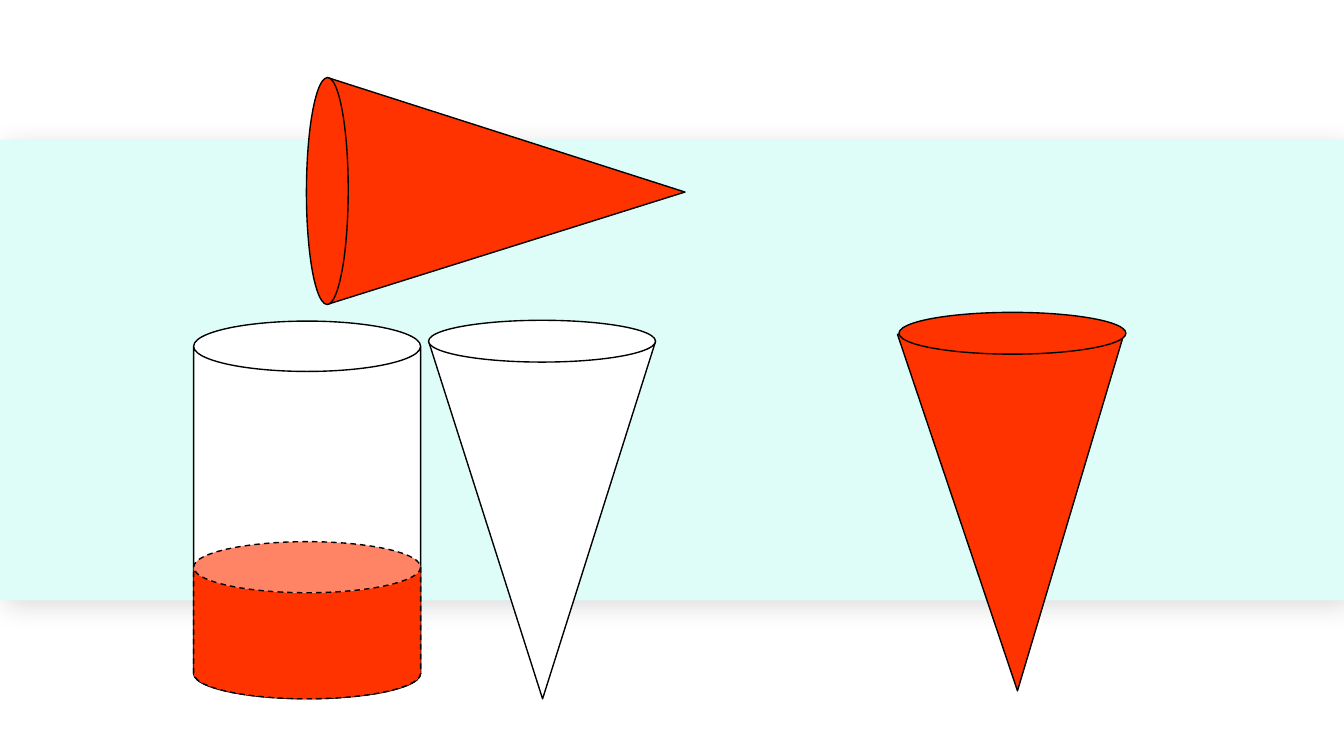
from dataclasses import dataclass
from math import cos, radians, sin

from lxml.etree import SubElement
from pptx import Presentation
from pptx.dml.color import RGBColor
from pptx.enum.dml import MSO_LINE_DASH_STYLE as Dash
from pptx.enum.shapes import MSO_SHAPE as Shape
from pptx.oxml.ns import qn
from pptx.util import Cm, Pt

WHITE = RGBColor(0xFF, 0xFF, 0xFF)
BLACK = RGBColor(0x00, 0x00, 0x00)
RED = RGBColor(0xFF, 0x33, 0x00)
MINT = RGBColor(0xDE, 0xFD, 0xF8)

SLIDE_WIDTH, SLIDE_HEIGHT = 25.4, 14.29
SOLID_WIDTH = 4.29
CONE_HEIGHT = 6.76
RIM_HEIGHT = 0.79


@dataclass
class Box:
    left: float
    top: float
    width: float
    height: float


def add_solid(shapes, kind, box, fill, turn=0, ratio=None):
    solid = shapes.add_shape(
        kind, Cm(box.left), Cm(box.top), Cm(box.width), Cm(box.height)
    )
    solid.shadow.inherit = False
    solid.fill.solid()
    solid.fill.fore_color.rgb = fill
    solid.line.color.rgb = BLACK
    solid.line.width = Pt(0.75)
    solid.rotation = turn
    if ratio is not None:
        solid.adjustments[0] = ratio
    return solid


def add_band(page, box):
    band = add_solid(page.shapes, Shape.RECTANGLE, box, MINT)
    band.line.fill.background()
    effects = band._element.spPr.find(qn("a:effectLst"))
    shadow = SubElement(
        effects,
        qn("a:outerShdw"),
        blurRad=str(Pt(15)),
        dist=str(Pt(5)),
        dir=str(45 * 60000),
        algn="ctr",
        rotWithShape="0",
    )
    color = SubElement(shadow, qn("a:srgbClr"), val=str(BLACK))
    SubElement(color, qn("a:alpha"), val="15000")


def add_cone(page, box, fill, turn, tip, body_tilt=0, rim_tilt=0):
    group = page.shapes.add_group_shape()
    add_solid(group.shapes, Shape.ISOSCELES_TRIANGLE, box, fill, turn + body_tilt, tip)
    reach = box.height / 2
    center_x = box.left + box.width / 2 - reach * sin(radians(turn))
    center_y = box.top + box.height / 2 + reach * cos(radians(turn))
    rim = Box(
        center_x - box.width / 2, center_y - RIM_HEIGHT / 2, box.width, RIM_HEIGHT
    )
    add_solid(group.shapes, Shape.OVAL, rim, fill, turn % 180 + rim_tilt)


def add_cylinder(page, box, liquid_height):
    group = page.shapes.add_group_shape()
    add_solid(group.shapes, Shape.CAN, box, WHITE, ratio=0.222)
    level = box.top + box.height - liquid_height
    liquid_box = Box(box.left, level, box.width, liquid_height)
    liquid = add_solid(group.shapes, Shape.CAN, liquid_box, RED, ratio=0.325)
    liquid.line.dash_style = Dash.DASH


def main():
    deck = Presentation()
    deck.slide_width = Cm(SLIDE_WIDTH)
    deck.slide_height = Cm(SLIDE_HEIGHT)
    page = deck.slides.add_slide(deck.slide_layouts[6])

    add_band(page, Box(0, 2.64, SLIDE_WIDTH, 8.71))
    add_cone(
        page, Box(16.99, 6.3, SOLID_WIDTH, CONE_HEIGHT), RED, 180, 0.485, body_tilt=-0.5
    )
    add_cone(page, Box(8.1, 6.45, SOLID_WIDTH, CONE_HEIGHT), WHITE, 180, 0.498)
    add_cone(
        page, Box(7.42, 0.23, SOLID_WIDTH, CONE_HEIGHT), RED, 90, 0.505, rim_tilt=0.1
    )
    add_cylinder(page, Box(3.66, 6.07, SOLID_WIDTH, 7.14), 2.97)

    deck.save("out.pptx")


if __name__ == "__main__":
    main()
